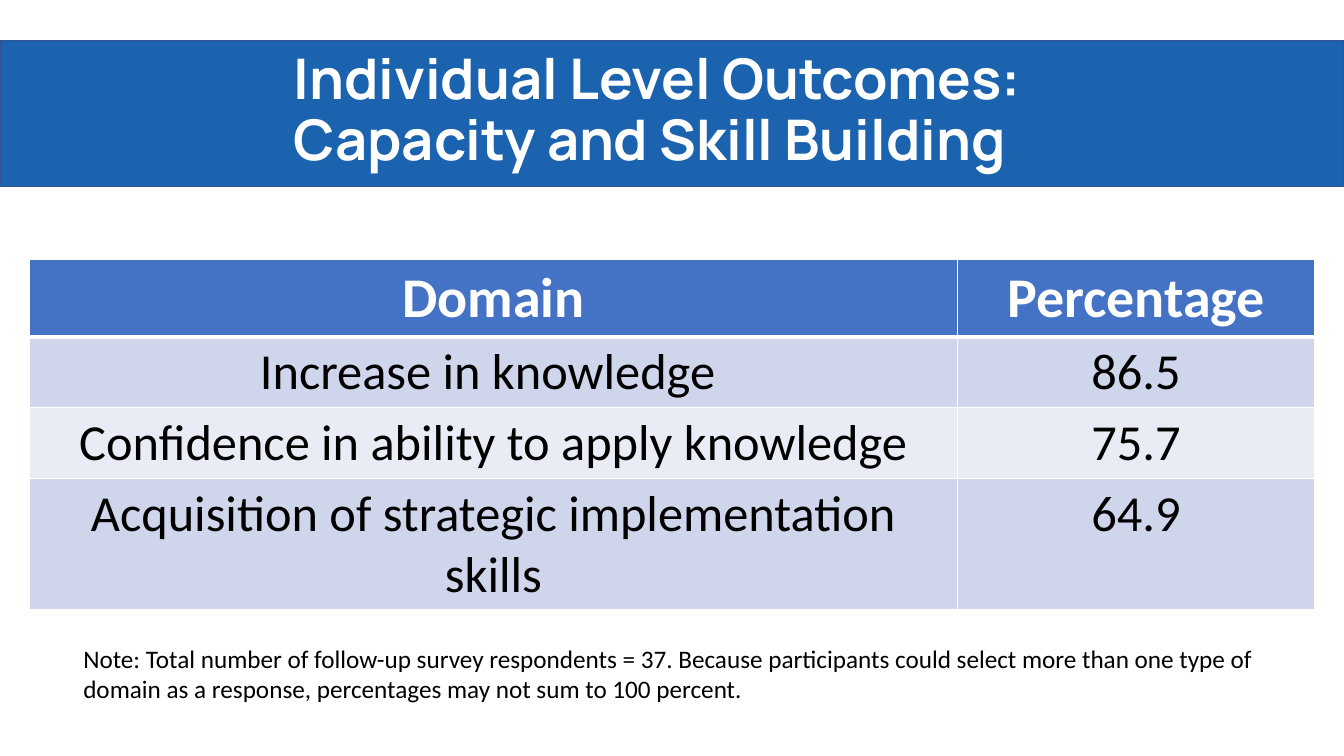
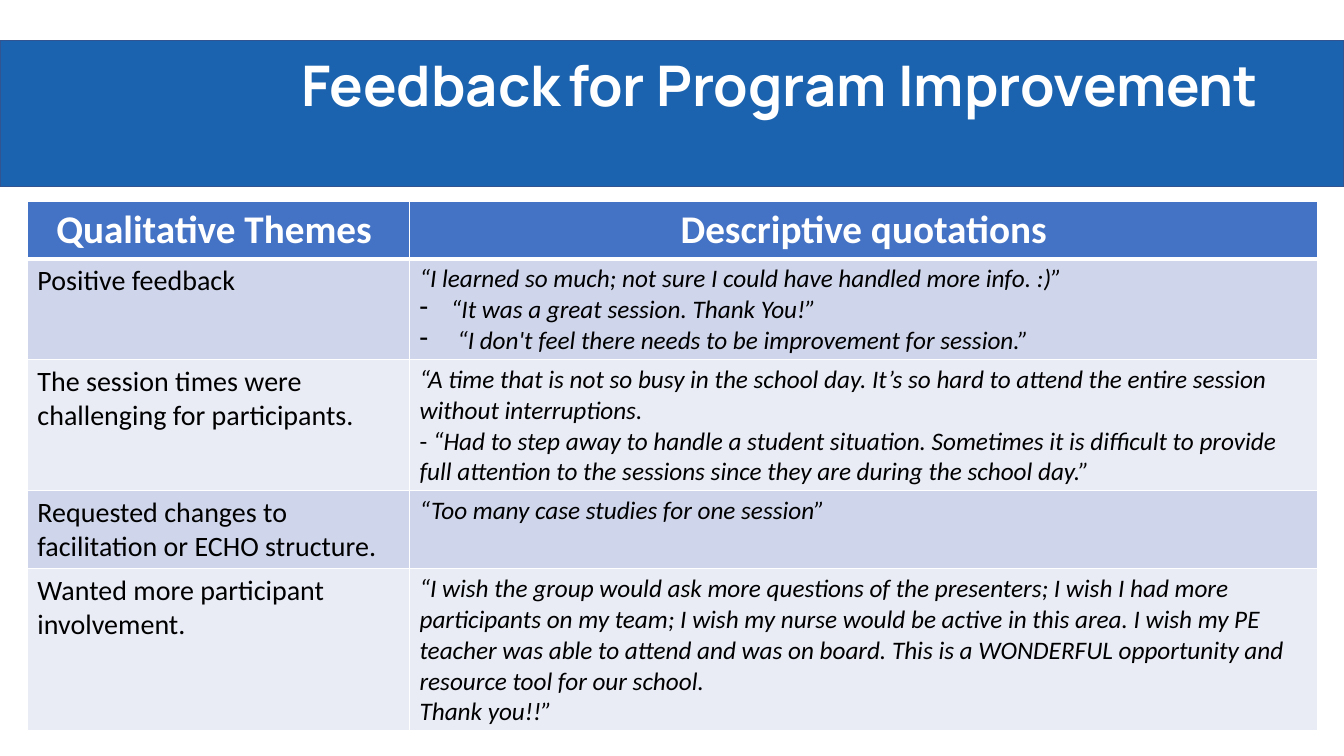
import dataclasses

import lxml.etree
import pptx
import pptx.dml.color
import pptx.enum.shapes
import pptx.enum.text
import pptx.oxml.ns
import pptx.util
from pptx.util import Cm

COLOURS = {
    "band": "1B63AF",
    "band_line": "325491",
    "header": "4472C4",
    "odd_row": "CFD5EA",
    "even_row": "E9EBF5",
    "white": "FFFFFF",
    "black": "000000",
}
SLIDE_WIDTH, SLIDE_HEIGHT = Cm(33.87), Cm(19.05)
LEFT = pptx.enum.text.PP_ALIGN.LEFT
CENTER = pptx.enum.text.PP_ALIGN.CENTER


@dataclasses.dataclass(frozen=True)
class Style:
    size: int
    colour: str = "black"
    font: str = "Calibri"
    bold: bool = False
    italic: bool = False
    align: int = LEFT
    line_spacing: float = 1.0


@dataclasses.dataclass(frozen=True)
class Dashed:
    """A paragraph with a dash as its bullet."""
    text: str
    indent: int


TITLE = Style(40, "white", "Manrope", bold=True, line_spacing=0.9)
NOTE = Style(18)
THEME = Style(20)
QUOTATION = Style(18, italic=True)


def rgb(name):
    return pptx.dml.color.RGBColor.from_string(COLOURS[name])


def add_dash(paragraph, indent):
    properties = paragraph._p.get_or_add_pPr()
    properties.set("marL", str(indent))
    properties.set("indent", str(-indent))
    bullet = lxml.etree.SubElement(properties, pptx.oxml.ns.qn("a:buChar"))
    bullet.set("char", "-")


def write(text_frame, paragraphs, style):
    """Write paragraphs: a string, a Dashed, or a list of (text, changes to the style)."""
    text_frame.word_wrap = True
    for index, content in enumerate(paragraphs):
        paragraph = text_frame.paragraphs[0] if index == 0 else text_frame.add_paragraph()
        paragraph.alignment = style.align
        paragraph.line_spacing = style.line_spacing
        if isinstance(content, Dashed):
            add_dash(paragraph, content.indent)
            content = content.text
        parts = [(content, {})] if isinstance(content, str) else content
        for text, changes in parts:
            run_style = dataclasses.replace(style, **changes)
            run = paragraph.add_run()
            run.text = text
            run.font.name = run_style.font
            run.font.size = pptx.util.Pt(run_style.size)
            run.font.bold = run_style.bold
            run.font.italic = run_style.italic
            run.font.color.rgb = rgb(run_style.colour)


def add_text(slide, box, paragraphs, style):
    write(slide.shapes.add_textbox(*box).text_frame, paragraphs, style)


def add_titled_slide(presentation, title_box, title):
    slide = presentation.slides.add_slide(presentation.slide_layouts[6])
    # Band across the slide
    band = slide.shapes.add_shape(
        pptx.enum.shapes.MSO_SHAPE.RECTANGLE, 0, Cm(1.02), SLIDE_WIDTH, Cm(3.68))
    band.shadow.inherit = False
    band.fill.solid()
    band.fill.fore_color.rgb = rgb("band")
    band.line.color.rgb = rgb("band_line")
    band.line.width = pptx.util.Pt(1)
    # Title on the band
    add_text(slide, title_box, title, TITLE)
    return slide


def set_borders(cell, top, bottom):
    """Draw white borders; top and bottom widths are in points."""
    properties = cell._tc.get_or_add_tcPr()
    widths = {"lnL": 1, "lnR": 1, "lnT": top, "lnB": bottom}
    for position, (tag, width) in enumerate(widths.items()):
        line = lxml.etree.Element(pptx.oxml.ns.qn("a:" + tag), w=str(pptx.util.Pt(width)))
        fill = lxml.etree.SubElement(line, pptx.oxml.ns.qn("a:solidFill"))
        lxml.etree.SubElement(fill, pptx.oxml.ns.qn("a:srgbClr"), val=COLOURS["white"])
        properties.insert(position, line)


def add_banded_table(slide, left, top, widths, heights, rows, header_style, column_styles):
    table = slide.shapes.add_table(
        len(rows), len(widths), left, top, sum(widths), sum(heights)).table
    for column, width in zip(table.columns, widths):
        column.width = width
    for row_index, (row, height) in enumerate(zip(rows, heights)):
        table.rows[row_index].height = height
        is_header = row_index == 0
        fill = "header" if is_header else "odd_row" if row_index % 2 else "even_row"
        for column_index, paragraphs in enumerate(row):
            cell = table.cell(row_index, column_index)
            cell.fill.solid()
            cell.fill.fore_color.rgb = rgb(fill)
            set_borders(cell, 3 if row_index == 1 else 1, 3 if is_header else 1)
            style = header_style if is_header else column_styles[column_index]
            write(cell.text_frame, paragraphs, style)


def add_outcomes_slide(presentation):
    slide = add_titled_slide(
        presentation, (Cm(7.16), Cm(1.17), Cm(26.7), Cm(3.68)),
        ["Individual Level Outcomes:", "Capacity and Skill Building"])
    # Outcome percentages
    rows = [
        (["Domain"], ["Percentage"]),
        (["Increase in knowledge "], ["86.5"]),
        (["Confidence in ability to apply knowledge"], ["75.7"]),
        (["Acquisition of strategic implementation skills"], ["64.9"]),
    ]
    value_style = Style(36, align=CENTER)
    add_banded_table(
        slide, Cm(0.75), Cm(6.54), [Cm(23.37), Cm(9.02)],
        [Cm(1.9), Cm(1.78), Cm(1.78), Cm(3.3)], rows,
        Style(40, "white", bold=True, align=CENTER), [value_style, value_style])
    # Note under the table
    add_text(slide, (Cm(1.85), Cm(16.08), Cm(30.07), Cm(1.8)), [
        "Note: Total number of follow-up survey respondents = 37. "
        "Because participants could select more than one type of",
        "domain as a response, percentages may not sum to 100 percent.",
    ], NOTE)


def add_feedback_slide(presentation):
    slide = add_titled_slide(
        presentation, (Cm(7.34), Cm(1.35), Cm(25.86), Cm(1.96)),
        [[("Feedback", {}), (" ", {"size": 28}), ("for Program Improvement", {})]])
    # Themes and quotations
    rows = [
        (["Qualitative Themes "], ["Descriptive quotations"]),
        (["Positive feedback"], [
            "“I learned so much; not sure I could have handled more info. :)”",
            Dashed("“It was a great session. Thank You!”", Cm(0.79)),
            Dashed("“I don't feel there needs to be improvement for session.”", Cm(0.95)),
        ]),
        (["The session times were challenging for participants."], [
            "“A time that is not so busy in the school day. It’s so hard to attend "
            "the entire session without interruptions.",
            [("- ", {"italic": False}),
             ("“Had to step away to handle a student situation. Sometimes it is "
              "difficult to provide full attention to the sessions since they are "
              "during the school day.”", {})],
        ]),
        (["Requested changes to facilitation or ECHO structure."],
         ["“Too many case studies for one session”"]),
        (["Wanted more participant involvement."], [
            "“I wish the group would ask more questions of the presenters; I wish I "
            "had more participants on my team; I wish my nurse would be active in "
            "this area. I wish my PE teacher was able to attend and was on board. "
            "This is a WONDERFUL opportunity and resource tool for our school.",
            "Thank you!!”",
        ]),
    ]
    add_banded_table(
        slide, Cm(0.69), Cm(5.08), [Cm(9.63), Cm(22.89)],
        [Cm(1.44), Cm(2.52), Cm(3.3), Cm(1.97), Cm(4.06)], rows,
        Style(28, "white", bold=True, align=CENTER), [THEME, QUOTATION])


def main():
    presentation = pptx.Presentation()
    presentation.slide_width = SLIDE_WIDTH
    presentation.slide_height = SLIDE_HEIGHT
    add_outcomes_slide(presentation)
    add_feedback_slide(presentation)
    presentation.save("out.pptx")


if __name__ == "__main__":
    main()
